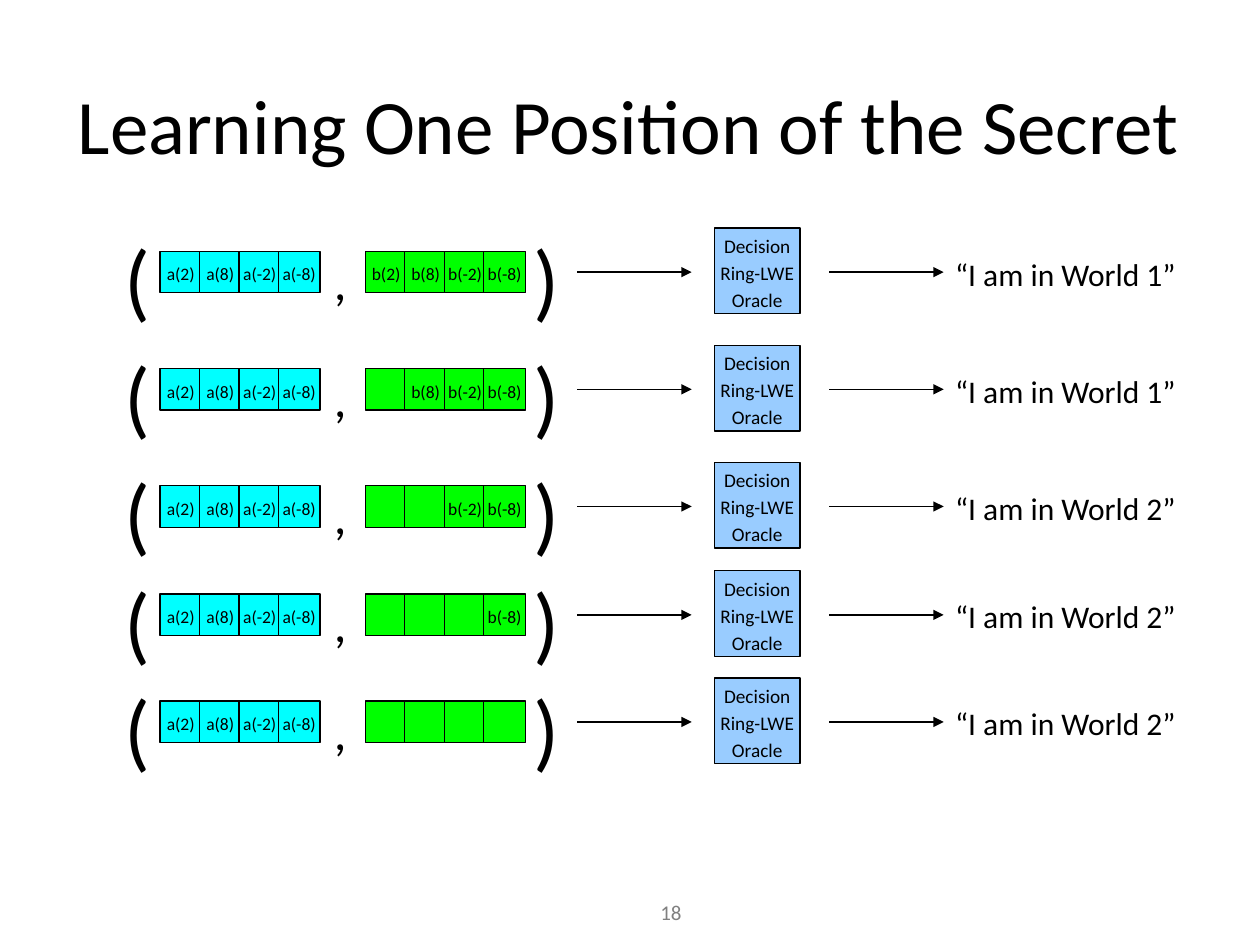
from dataclasses import dataclass
from pptx import Presentation
from pptx.dml.color import RGBColor
from pptx.enum.shapes import MSO_CONNECTOR, MSO_SHAPE
from pptx.enum.text import MSO_ANCHOR, MSO_AUTO_SIZE, PP_ALIGN
from pptx.oxml.ns import qn
from pptx.util import Inches, Pt
from lxml import etree

RECT = MSO_SHAPE.RECTANGLE
LINE = MSO_CONNECTOR.STRAIGHT
LEFT, MID = PP_ALIGN.LEFT, PP_ALIGN.CENTER
TOP, CORE = MSO_ANCHOR.TOP, MSO_ANCHOR.MIDDLE
FIXED = MSO_AUTO_SIZE.NONE


@dataclass(frozen=True)
class Theme:
    font: str = "Calibri"
    ink: str = "000000"
    gray: str = "808080"
    cyan: str = "00FFFF"
    green: str = "00FF00"
    blue: str = "99CCFF"
    title: int = 44
    paren: int = 49
    comma: int = 29
    reply: int = 18
    page: int = 12
    label: int = 11
    cell: int = 10
    rule: float = 0.75
    lead: float = 1.17


THEME = Theme()
TITLE = "Learning One Position of the Secret"
PAGE = "18"
ORACLE = ["Decision", "Ring-LWE", "Oracle"]
POINTS = ["2", "8", "-2", "-8"]
ROWS = [
    (0, "“I am in World 1”"),
    (1, "“I am in World 1”"),
    (2, "“I am in World 2”"),
    (3, "“I am in World 2”"),
    (4, "“I am in World 2”"),
]

WIDE, HIGH = 10, 7.5
MIDS = [2.16, 3.09, 4.02, 4.88, 5.73]
CELL, STEP, BOX = 0.33, 0.94 / 3, 0.68
COLS = {"open": 0.9, "a": 1.27, "comma": 2.56, "b": 2.9, "close": 4.14,
        "in": 4.58, "oracle": 5.67, "out": 6.58, "reply": 7.49}
REACH = 0.91


def color(code):
    return RGBColor.from_string(code)


def write(shape, text, size, ink=THEME.ink, align=LEFT, anchor=TOP,
          lead=None, wrap=True, top=0.04):
    frame = shape.text_frame
    frame.auto_size = FIXED
    frame.word_wrap = wrap
    frame.vertical_anchor = anchor
    frame.margin_left = frame.margin_right = Inches(0.09)
    frame.margin_top, frame.margin_bottom = Inches(top), Inches(0.04)
    lines = [text] if isinstance(text, str) else text
    for i, line in enumerate(lines):
        para = frame.paragraphs[0] if i == 0 else frame.add_paragraph()
        para.alignment = align
        if lead:
            para.line_spacing = lead
        run = para.add_run()
        run.text = line
        run.font.name, run.font.size = THEME.font, Pt(size)
        run.font.color.rgb = color(ink)


def label(slide, text, x, y, w, h, size, **form):
    box = slide.shapes.add_textbox(*map(Inches, (x, y, w, h)))
    write(box, text, size, **form)


def square(slide, x, mid, side, fill, text, size):
    box = slide.shapes.add_shape(RECT, *map(Inches, (x, mid - side / 2, side, side)))
    box.shadow.inherit = False
    box.fill.solid()
    box.fill.fore_color.rgb = color(fill)
    box.line.color.rgb = color(THEME.ink)
    box.line.width = Pt(THEME.rule)
    if text:
        write(box, text, size, align=MID, anchor=CORE, lead=THEME.lead, wrap=False)


def arrow(slide, x, y):
    line = slide.shapes.add_connector(LINE, *map(Inches, (x, y, x + REACH, y)))
    line.line.color.rgb = color(THEME.ink)
    line.line.width = Pt(THEME.rule)
    tip = etree.SubElement(line.line._get_or_add_ln(), qn("a:tailEnd"))
    tip.set("type", "triangle")
    etree.SubElement(line._element.spPr, qn("a:effectLst"))


def vector(slide, name, mid, fill, blank=0):
    for i, point in enumerate(POINTS):
        text = f"{name}({point})" if i >= blank else ""
        square(slide, COLS[name] + i * STEP, mid, CELL, fill, text, THEME.cell)


def query(slide, mid, blank, reply):
    vector(slide, "a", mid, THEME.cyan)
    label(slide, ",", COLS["comma"], mid - 0.25, 0.33, 0.79, THEME.comma, top=0.07)
    vector(slide, "b", mid, THEME.green, blank)
    for key, sign in (("open", "("), ("close", ")")):
        label(slide, sign, COLS[key], mid - 0.46, 0.45, 0.85, THEME.paren, top=0.09)
    arrow(slide, COLS["in"], mid)
    square(slide, COLS["oracle"], mid - 0.01, BOX, THEME.blue, ORACLE, THEME.label)
    arrow(slide, COLS["out"], mid)
    label(slide, reply, COLS["reply"], mid - 0.23, 2.04, 0.41, THEME.reply,
          lead=THEME.lead)


def main():
    deck = Presentation()
    deck.slide_width, deck.slide_height = Inches(WIDE), Inches(HIGH)
    slide = deck.slides.add_slide(deck.slide_layouts[5])
    head = slide.shapes.title
    head.left, head.top, head.width, head.height = map(Inches, (0.23, 0.34, 9.52, 1.16))
    write(head, TITLE, THEME.title, align=MID, anchor=CORE, lead=THEME.lead)
    label(slide, PAGE, 4.71, 7.1, 1.23, 0.4, THEME.page, ink=THEME.gray, align=MID)
    for mid, (blank, reply) in zip(MIDS, ROWS):
        query(slide, mid, blank, reply)
    deck.save("out.pptx")


if __name__ == "__main__":
    main()
